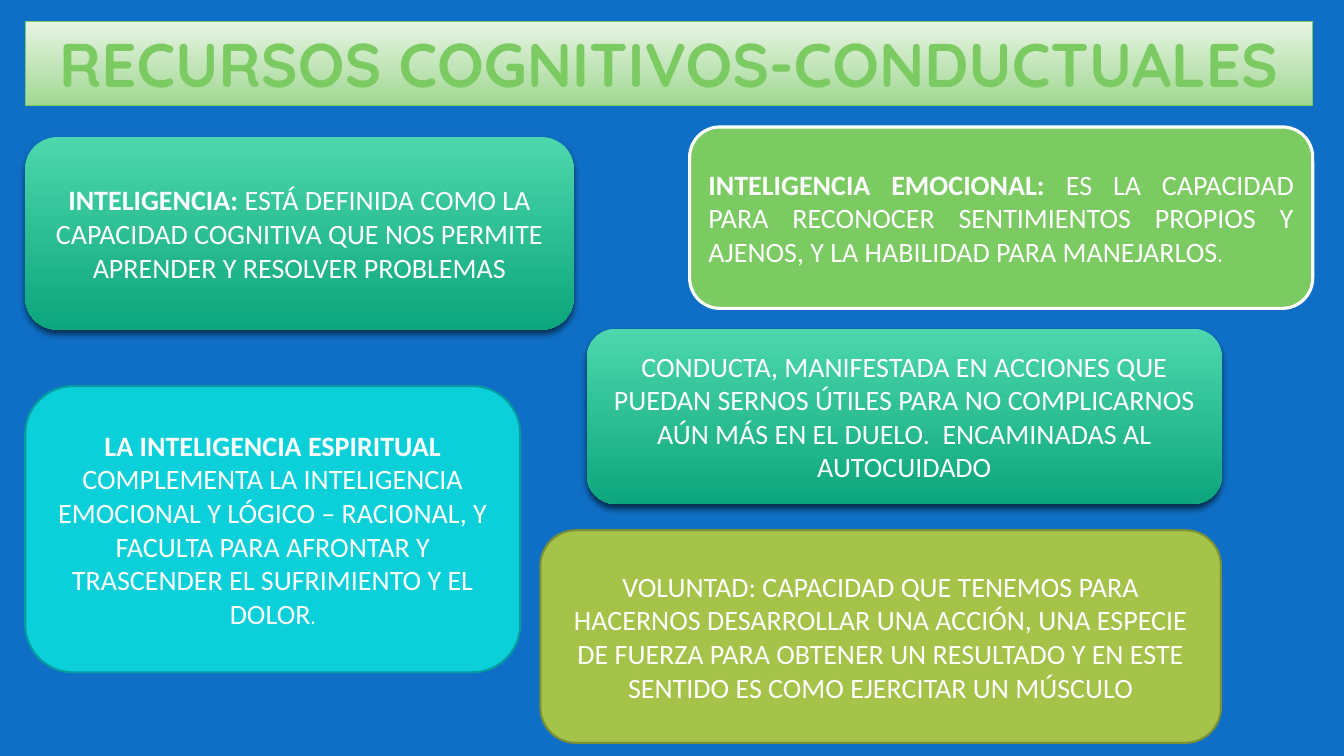
from lxml.etree import SubElement
from pptx import Presentation
from pptx.dml.color import RGBColor
from pptx.enum.shapes import MSO_SHAPE
from pptx.enum.text import MSO_ANCHOR, MSO_AUTO_SIZE, PP_ALIGN
from pptx.oxml.ns import qn
from pptx.util import Inches, Pt

COLORS = {
    "background": "0F6FC6",
    "white": "FFFFFF",
    "black": "000000",
    "green": "7CCA62",
    "pale_top": "E7F4E4",
    "pale_bottom": "A1D892",
    "mint_top": "4DD7AC",
    "mint_bottom": "0DA67C",
    "cyan": "0BD0D9",
    "cyan_edge": "089AA1",
    "olive": "A5C249",
    "olive_edge": "7A9036",
}

deck = Presentation()
deck.slide_width, deck.slide_height = Inches(13.33), Inches(7.5)
column, row = deck.slide_width / 100, deck.slide_height / 100
slide = deck.slides.add_slide(deck.slide_layouts[6])


def rgb(name):
    return RGBColor.from_string(COLORS[name])


def write(paragraph, text, size=20, font="Calibri", color="white", bold=False):
    run = paragraph.add_run()
    run.text = text
    run.font.size = Pt(size)
    run.font.name = font
    run.font.bold = bold
    run.font.color.rgb = rgb(color)


slide.background.fill.solid()
slide.background.fill.fore_color.rgb = rgb("background")

HEADING = {"size": 44, "font": "Quicksand", "color": "green", "bold": True}
STRONG = {"bold": True}
PERIOD = {"font": "Quicksand"}
MINT = ["mint_top", "mint_bottom"]

panels = [
    ((1.88, 2.8, 95.8, 11.2), ["pale_top", "pale_bottom"], ("green", 0.75), PP_ALIGN.CENTER, [
        ("RECURSOS COGNITIVOS-CONDUCTUALES", HEADING),
    ]),
    ((1.88, 18.13, 40.81, 25.47), MINT, None, PP_ALIGN.CENTER, [
        ("INTELIGENCIA: ", STRONG),
        ("ESTÁ DEFINIDA COMO LA CAPACIDAD COGNITIVA QUE NOS PERMITE "
         "APRENDER Y RESOLVER PROBLEMAS", {}),
    ]),
    ((51.31, 16.8, 46.36, 24), ["green"], ("white", 2.25), PP_ALIGN.JUSTIFY, [
        ("INTELIGENCIA EMOCIONAL: ", STRONG),
        ("ES LA CAPACIDAD PARA RECONOCER SENTIMIENTOS PROPIOS Y AJENOS, "
         "Y LA HABILIDAD PARA MANEJARLOS", {}),
        (". ", PERIOD),
    ]),
    ((1.88, 51.07, 36.83, 37.87), ["cyan"], ("cyan_edge", 1.5), PP_ALIGN.CENTER, [
        ("LA INTELIGENCIA ESPIRITUAL ", STRONG),
        ("COMPLEMENTA LA INTELIGENCIA EMOCIONAL Y LÓGICO – RACIONAL, Y FACULTA "
         "PARA AFRONTAR Y TRASCENDER EL SUFRIMIENTO Y EL DOLOR", {}),
        (".", PERIOD),
    ]),
    ((43.66, 43.47, 47.26, 23.2), MINT, None, PP_ALIGN.CENTER, [
        ("CONDUCTA, MANIFESTADA EN ACCIONES QUE PUEDAN SERNOS ÚTILES PARA NO "
         "COMPLICARNOS AÚN MÁS EN EL DUELO.  ENCAMINADAS AL AUTOCUIDADO", {}),
    ]),
    ((40.21, 70.13, 50.64, 28.13), ["olive"], ("olive_edge", 1.5), PP_ALIGN.CENTER, [
        ("VOLUNTAD: CAPACIDAD QUE TENEMOS PARA HACERNOS DESARROLLAR UNA ACCIÓN, "
         "UNA ESPECIE DE FUERZA PARA OBTENER UN RESULTADO Y EN ESTE SENTIDO ES "
         "COMO EJERCITAR UN MÚSCULO", {}),
    ]),
]

for (left, top, width, height), fills, edge, alignment, pieces in panels:
    is_heading = pieces[0][1] is HEADING
    panel = slide.shapes.add_shape(
        MSO_SHAPE.RECTANGLE if is_heading else MSO_SHAPE.ROUNDED_RECTANGLE,
        round(left * column), round(top * row),
        round(width * column), round(height * row))
    panel.shadow.inherit = False

    if len(fills) == 2:
        panel.fill.gradient()
        panel.fill.gradient_angle = 270
        for stop, shade in zip(panel.fill.gradient_stops, fills):
            stop.color.rgb = rgb(shade)
    else:
        panel.fill.solid()
        panel.fill.fore_color.rgb = rgb(fills[0])

    if edge:
        edge_color, edge_width = edge
        panel.line.color.rgb = rgb(edge_color)
        panel.line.width = Pt(edge_width)
    else:
        panel.line.fill.background()

    if fills is MINT:
        effects = panel.element.spPr.find(qn("a:effectLst"))
        shadow = SubElement(effects, qn("a:outerShdw"), blurRad=str(Pt(5)),
                            dist=str(Pt(3)), dir="5400000", rotWithShape="0")
        shade = SubElement(shadow, qn("a:srgbClr"), val=COLORS["black"])
        SubElement(shade, qn("a:alpha"), val="60000")

    frame = panel.text_frame
    frame.word_wrap = True
    frame.vertical_anchor = MSO_ANCHOR.TOP if is_heading else MSO_ANCHOR.MIDDLE
    if is_heading:
        frame.auto_size = MSO_AUTO_SIZE.SHAPE_TO_FIT_TEXT
    paragraph = frame.paragraphs[0]
    paragraph.alignment = alignment
    for text, style in pieces:
        write(paragraph, text, **style)

deck.save("out.pptx")
